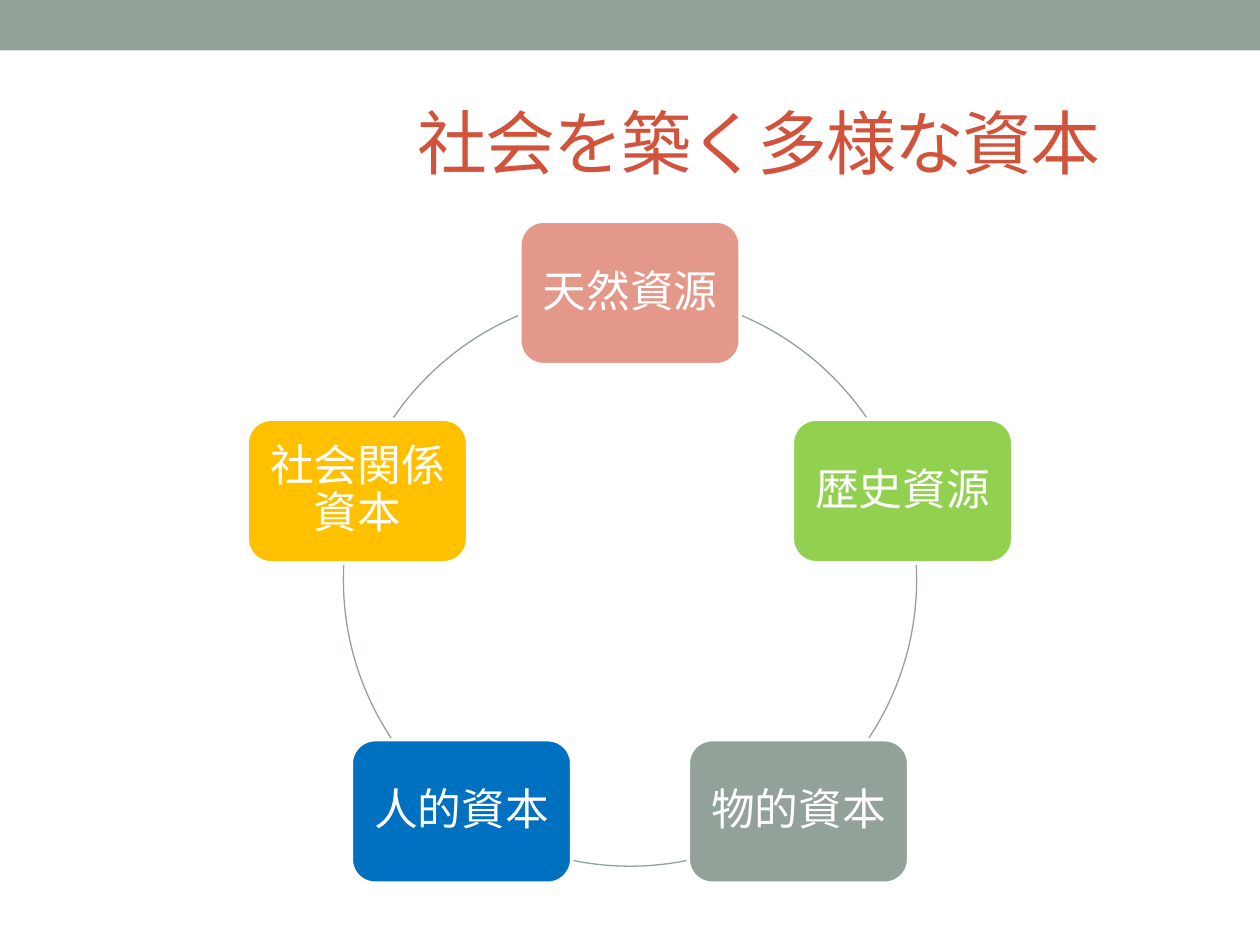
from math import cos, radians, sin

from lxml.etree import SubElement
from pptx import Presentation
from pptx.dml.color import RGBColor
from pptx.enum.shapes import MSO_SHAPE as Preset
from pptx.enum.text import MSO_ANCHOR as Anchor, MSO_AUTO_SIZE as AutoSize, PP_ALIGN as Align
from pptx.util import Inches, Pt

CENTER_X, CENTER_Y, RADIUS = 5, 4.6, 2.275
CAPITALS = [
    ("天然資源", "E4988A"),
    ("歴史資源", "92D050"),
    ("物的資本", "93A299"),
    ("人的資本", "0070C0"),
    ("社会関係資本", "FFC000"),
]
ARCS = [(293, 325.6), (357.1, 33.6), (78.6, 101.4), (146.4, 182.9), (214.4, 247)]


def color(value):
    return RGBColor.from_string(value)


def write(frame, text, size, fill, align, font="Arial", line_spacing=1.0,
          after=0, indent=0, tracking=0):
    frame.word_wrap = True
    frame.auto_size = AutoSize.NONE
    frame.vertical_anchor = Anchor.MIDDLE
    paragraph = frame.paragraphs[0]
    paragraph.alignment = align
    paragraph.line_spacing = line_spacing
    paragraph.space_after = Pt(after)
    properties = paragraph._p.get_or_add_pPr()
    properties.set("marL", str(Inches(indent)))
    properties.set("indent", "0")
    run = paragraph.add_run()
    run.text = text
    run.font.name = font
    run.font.size = Pt(size)
    run.font.color.rgb = color(fill)
    if tracking:
        run._r.get_or_add_rPr().set("spc", str(tracking * 100))


class CapitalSlide:
    gray = "93A299"
    red = "D2533C"
    white = "FFFFFF"

    def __init__(self, presentation):
        self.slide = presentation.slides.add_slide(presentation.slide_layouts[5])

    def shape(self, preset, left, top, width, height, fill=None, line=None, weight=0.75):
        shape = self.slide.shapes.add_shape(
            preset, Inches(left), Inches(top), Inches(width), Inches(height))
        shape.shadow.inherit = False
        if fill:
            shape.fill.solid()
            shape.fill.fore_color.rgb = color(fill)
        else:
            shape.fill.background()
        if line:
            shape.line.color.rgb = color(line)
            shape.line.width = Pt(weight)
        else:
            shape.line.fill.background()
        return shape

    def band(self):
        self.shape(Preset.RECTANGLE, 0, 0, 10, 0.4, fill=self.gray)

    def title(self, text):
        title = self.slide.shapes.title
        title.left, title.top = Inches(0.5), Inches(0.58)
        title.width, title.height = Inches(9), Inches(1.08)
        write(title.text_frame, text, 40, self.red, Align.LEFT, indent=2.71, tracking=-1)

    def box(self, text, fill, angle, width=1.75, height=1.14):
        left = CENTER_X + RADIUS * cos(radians(angle)) - width / 2
        top = CENTER_Y + RADIUS * sin(radians(angle)) - height / 2
        box = self.shape(Preset.ROUNDED_RECTANGLE, left, top, width, height,
                         fill, self.white, 2.08)
        frame = box.text_frame
        frame.margin_left = frame.margin_right = Inches(0.1)
        frame.margin_top = frame.margin_bottom = Inches(0.1)
        write(frame, text, 25, self.white, Align.CENTER, line_spacing=0.9, after=8.75)

    def arc(self, start, end):
        arc = self.shape(Preset.ARC, CENTER_X - RADIUS, CENTER_Y - RADIUS,
                         2 * RADIUS, 2 * RADIUS, line=self.gray)
        arc.adjustments[0] = start * 0.6
        arc.adjustments[1] = end * 0.6


def main():
    presentation = Presentation()
    presentation.slide_width, presentation.slide_height = Inches(10), Inches(7.5)
    page = CapitalSlide(presentation)
    page.band()
    page.title("社会を築く多様な資本")
    for index, ((text, fill), (start, end)) in enumerate(zip(CAPITALS, ARCS)):
        page.box(text, fill, 72 * index - 90)
        page.arc(start, end)
    presentation.save("out.pptx")


if __name__ == "__main__":
    main()
